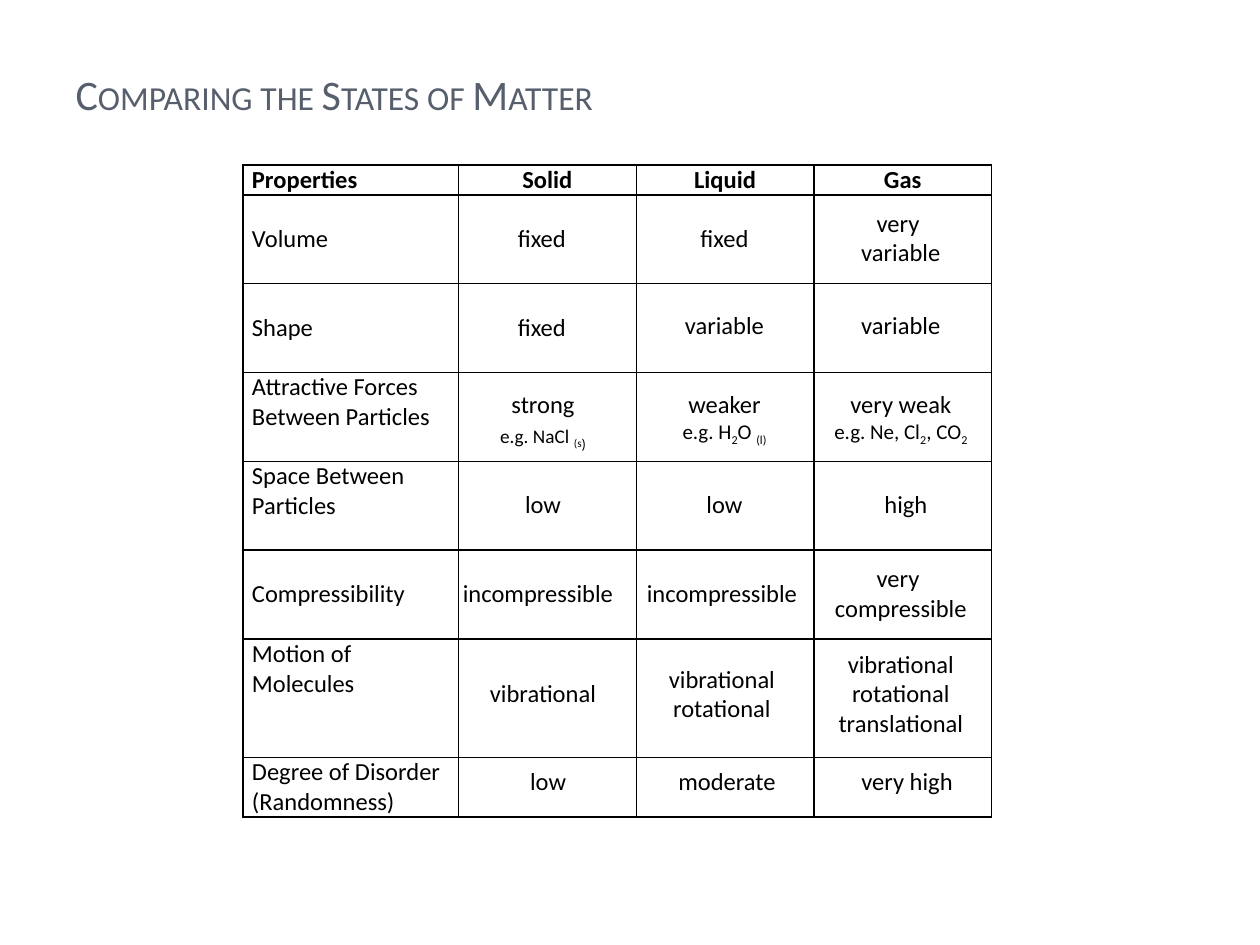
from lxml import etree
from pptx import Presentation
from pptx.dml.color import RGBColor
from pptx.enum.text import MSO_ANCHOR, MSO_AUTO_SIZE, PP_ALIGN
from pptx.oxml.ns import qn
from pptx.util import Inches, Pt

TOP, MIDDLE, BOTTOM = MSO_ANCHOR.TOP, MSO_ANCHOR.MIDDLE, MSO_ANCHOR.BOTTOM
LEFT, CENTER = PP_ALIGN.LEFT, PP_ALIGN.CENTER
FIT_TEXT = MSO_AUTO_SIZE.SHAPE_TO_FIT_TEXT
FONT, BLACK, SLATE = "Calibri", "000000", "575F6D"
BODY, LINE_HEIGHT, PADDING = 14, 0.235, 0.1

TITLE = "Comparing the States of Matter"
HEADERS = ["Properties", "Solid", "Liquid", "Gas"]
# Property lines, anchor, row height in text lines
PROPERTIES = [
    (["Volume"], MIDDLE, 3),
    (["Shape"], MIDDLE, 3),
    (["Attractive Forces Between Particles"], TOP, 3),
    (["Space Between Particles"], TOP, 3),
    (["Compressibility"], MIDDLE, 3),
    (["Motion of Molecules"], TOP, 4),
    (["Degree of Disorder", "(Randomness)"], TOP, 2),
]
TABLE_LEFT, TABLE_TOP = 1.93, 1.31
COLUMN_WIDTHS = [1.71, 1.41, 1.41, 1.41]

# A line is a string or a list of (text, size, is_subscript) spans.
SALT = [("e.g. NaCl ", 11, False), ("(s", 11, True), (")", 14, True)]
WATER = [("e.g. H", 12, False), ("2", 12, True), ("O ", 12, False), ("(l)", 12, True)]
GASES = [("e.g. Ne, Cl", 12, False), ("2", 12, True), (", CO", 12, False), ("2", 12, True)]
# One row per property, one entry per state: centre x, top, width, lines
VALUES = [
    [(4.3, 1.72, 0.59, ["fixed"]), (5.75, 1.72, 0.59, ["fixed"]),
     (7.15, 1.6, 0.84, ["very ", "variable"])],
    [(4.3, 2.43, 0.59, ["fixed"]), (5.75, 2.41, 0.84, ["variable"]),
     (7.15, 2.41, 0.84, ["variable"])],
    [(4.31, 3.04, 0.9, ["strong", SALT]), (5.75, 3.04, 0.89, ["weaker", WATER]),
     (7.15, 3.04, 1.28, ["very weak", GASES])],
    [(4.31, 3.83, 0.49, ["low"]), (5.75, 3.83, 0.49, ["low"]),
     (7.19, 3.83, 0.92, ["high"])],
    [(4.27, 4.54, 1.41, ["incompressible"]), (5.73, 4.54, 1.41, ["incompressible"]),
     (7.15, 4.42, 1.26, ["very ", "compressible"])],
    [(4.31, 5.33, 1.06, ["vibrational"]),
     (5.73, 5.22, 1.06, ["vibrational", "rotational"]),
     (7.15, 5.1, 1.21, ["vibrational", "rotational", "translational"])],
    [(4.35, 6.03, 0.49, ["low"]), (5.77, 6.03, 0.98, ["moderate"]),
     (7.2, 6.03, 0.94, ["very high"])],
]


def color(hex_string):
    return RGBColor.from_string(hex_string)


def add_span(para, text, size=BODY, subscript=False, bold=False, ink=BLACK):
    span = para.add_run()
    span.text = text
    font = span.font
    font.name, font.size, font.bold = FONT, Pt(size), bold
    font.color.rgb = color(ink)
    if subscript:
        span._r.get_or_add_rPr().set("baseline", "-25000")
    return span


def write_lines(frame, lines, align, bold=False):
    for index, line in enumerate(lines):
        para = frame.add_paragraph() if index else frame.paragraphs[0]
        para.alignment = align
        spans = [(line,)] if isinstance(line, str) else line
        for span in spans:
            add_span(para, *span, bold=bold)


def add_borders(cell):
    properties = cell._tc.get_or_add_tcPr()
    for side in ("lnL", "lnR", "lnT", "lnB"):
        line = etree.SubElement(properties, qn(f"a:{side}"), w=str(Pt(1)))
        fill = etree.SubElement(line, qn("a:solidFill"))
        etree.SubElement(fill, qn("a:srgbClr"), val=BLACK)


def fill_cell(cell, lines, align=LEFT, anchor=TOP, bold=False):
    add_borders(cell)
    cell.fill.background()
    cell.margin_left = cell.margin_right = Inches(0.07)
    cell.margin_top = cell.margin_bottom = 0
    cell.vertical_anchor = anchor
    write_lines(cell.text_frame, lines, align, bold)


def add_title(page):
    title = page.shapes.title
    title.left, title.top = Inches(0.5), Inches(0.3)
    title.width, title.height = Inches(9), Inches(0.69)
    title.text_frame.vertical_anchor = BOTTOM
    para = title.text_frame.paragraphs[0]
    para.alignment = LEFT
    span = add_span(para, TITLE, 24, ink=SLATE)
    span._r.get_or_add_rPr().set("cap", "small")


def add_properties_table(page):
    row_lines = [1] + [count for _, _, count in PROPERTIES]
    table = page.shapes.add_table(
        len(row_lines), len(HEADERS), Inches(TABLE_LEFT), Inches(TABLE_TOP),
        Inches(sum(COLUMN_WIDTHS)), Inches(sum(row_lines) * LINE_HEIGHT)).table
    table.first_row = table.horz_banding = False
    for column, width in zip(table.columns, COLUMN_WIDTHS):
        column.width = Inches(width)
    for row, count in zip(table.rows, row_lines):
        row.height = Inches(count * LINE_HEIGHT)
    for index, header in enumerate(HEADERS):
        fill_cell(table.cell(0, index), [header], CENTER if index else LEFT, bold=True)
    for row, (lines, anchor, _) in enumerate(PROPERTIES, 1):
        fill_cell(table.cell(row, 0), lines, anchor=anchor)
        for column in range(1, len(HEADERS)):
            fill_cell(table.cell(row, column), [""])


def add_value(page, center, top, width, lines):
    height = PADDING + len(lines) * LINE_HEIGHT
    box = page.shapes.add_textbox(
        Inches(center - width / 2), Inches(top), Inches(width), Inches(height))
    frame = box.text_frame
    frame.word_wrap = False
    frame.auto_size = FIT_TEXT
    write_lines(frame, lines, CENTER)


def main():
    deck = Presentation()
    deck.slide_width, deck.slide_height = Inches(10), Inches(7.5)
    page = deck.slides.add_slide(deck.slide_layouts[5])
    add_title(page)
    add_properties_table(page)
    for row in VALUES:
        for value in row:
            add_value(page, *value)
    deck.save("out.pptx")


if __name__ == "__main__":
    main()
